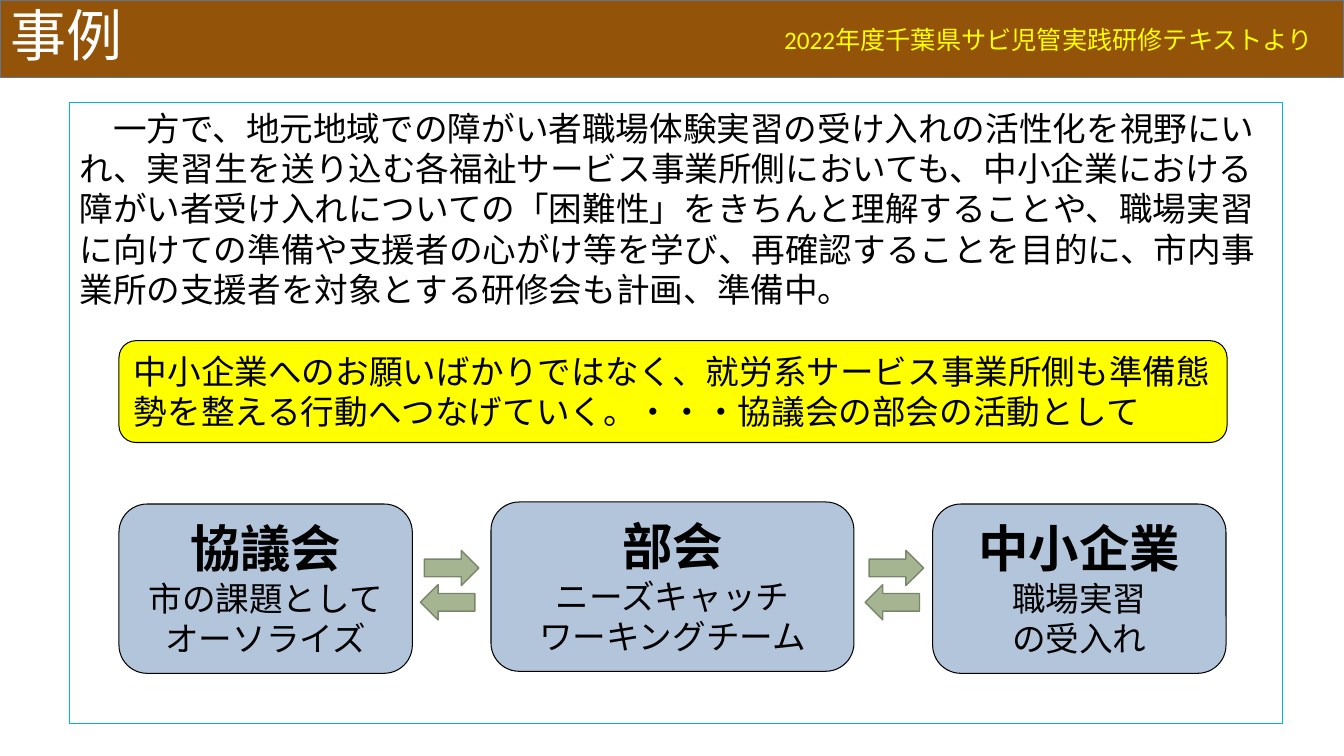
import pptx
import pptx.util
from pptx.dml.color import RGBColor
from pptx.enum.shapes import MSO_SHAPE
from pptx.enum.text import MSO_ANCHOR, MSO_AUTO_SIZE, PP_ALIGN

Inches = pptx.util.Inches
Pt = pptx.util.Pt

COLORS = {
    "brown": "93540A", "slate": "5F7590", "white": "FFFFFF",
    "black": "000000", "yellow": "FFFF00", "cyan": "00B0F0",
    "blue": "B3C5DA", "green": "A5B592", "dark green": "7A866C",
}


def color(name):
    return RGBColor.from_string(COLORS[name])


def place(shape, left, top, width, height):
    shape.left, shape.top = Inches(left), Inches(top)
    shape.width, shape.height = Inches(width), Inches(height)


def paint(shape, fill, line, line_width):
    shape.fill.solid()
    shape.fill.fore_color.rgb = color(fill)
    shape.line.color.rgb = color(line)
    shape.line.width = Pt(line_width)


def add_box(slide, kind, box, fill, line, line_width):
    shape = slide.shapes.add_shape(kind, *map(Inches, box))
    shape.shadow.inherit = False
    paint(shape, fill, line, line_width)
    return shape


def write(shape, lines, sizes, font="Calibri", ink="black",
          align=PP_ALIGN.LEFT, anchor=MSO_ANCHOR.TOP):
    """Write one paragraph per line; the last size serves all further lines."""
    frame = shape.text_frame
    frame.text = "\n".join(lines)
    frame.word_wrap = True
    frame.auto_size = MSO_AUTO_SIZE.NONE
    frame.vertical_anchor = anchor
    for index, paragraph in enumerate(frame.paragraphs):
        paragraph.alignment = align
        run_font = paragraph.runs[0].font
        run_font.name = font
        run_font.size = Pt(sizes[min(index, len(sizes) - 1)])
        run_font.bold = len(sizes) > 1 and index == 0
        run_font.color.rgb = color(ink)


def add_header(slide, left, top, width, height):
    title = slide.shapes.title
    place(title, left, top, width, height)
    paint(title, "brown", "slate", 1)
    write(title, ["事例"], [40], ink="white", anchor=MSO_ANCHOR.MIDDLE)
    title.text_frame.paragraphs[0].line_spacing = 0.9

    credit = slide.shapes.add_textbox(
        Inches(left + 7.26), Inches(top + 0.19), Inches(5.86), Inches(0.4))
    write(credit, ["2022年度千葉県サビ児管実践研修テキストより"], [18],
          ink="yellow", align=PP_ALIGN.RIGHT)


def add_case_text(slide, *box):
    panel = add_box(slide, MSO_SHAPE.RECTANGLE, box, "white", "cyan", 1)
    write(panel, [
        "\u3000一方で、地元地域での障がい者職場体験実習の受け入れの活性化を視野にいれ、"
        "実習生を送り込む各福祉サービス事業所側においても、中小企業における"
        "障がい者受け入れについての「困難性」をきちんと理解することや、"
        "職場実習に向けての準備や支援者の心がけ等を学び、再確認することを目的に、"
        "市内事業所の支援者を対象とする研修会も計画、準備中。"
    ], [24], font="Arial")


def add_key_message(slide, *box):
    message = add_box(slide, MSO_SHAPE.ROUNDED_RECTANGLE, box,
                      "yellow", "black", 0.75)
    write(message, [
        "中小企業へのお願いばかりではなく、就労系サービス事業所側も準備態勢を"
        "整える行動へつなげていく。・・・協議会の部会の活動として"
    ], [24])


def add_exchange_arrows(slide, left, top):
    """Place an arrow to the right above an arrow to the left."""
    for x, y, rotation in ((0.04, 0, 0), (0, 0.34, 180)):
        arrow = add_box(slide, MSO_SHAPE.RIGHT_ARROW,
                        (left + x, top + y, 0.54, 0.35),
                        "green", "dark green", 1)
        arrow.rotation = rotation


def add_cooperation(slide, left, top, width, height):
    side = 2.91
    # Partners: offset, drop, width, lines
    partners = [
        (0, 0.02, side, ["協議会", "市の課題としてオーソライズ"]),
        (3.69, 0, 3.6, ["部会", "ニーズキャッチ", "ワーキングチーム"]),
        (width - side, 0.02, side, ["中小企業", "職場実習", "の受入れ"]),
    ]
    for offset, drop, partner_width, lines in partners:
        partner = add_box(slide, MSO_SHAPE.ROUNDED_RECTANGLE,
                          (left + offset, top + drop, partner_width, height),
                          "blue", "black", 0.75)
        write(partner, lines, [36, 24], align=PP_ALIGN.CENTER)

    # Arrows in the two gaps
    for offset in (2.99, 7.4):
        add_exchange_arrows(slide, left + offset, top + 0.48)


def main():
    presentation = pptx.Presentation()
    presentation.slide_width = Inches(13.33)
    presentation.slide_height = Inches(7.5)
    slide = presentation.slides.add_slide(presentation.slide_layouts[5])

    add_header(slide, 0, 0, 13.33, 0.77)
    add_case_text(slide, 0.69, 1.02, 12.03, 6.16)
    add_key_message(slide, 1.18, 3.38, 10.99, 1.01)
    add_cooperation(slide, 1.18, 4.98, 10.98, 1.68)

    presentation.save("out.pptx")


if __name__ == "__main__":
    main()
